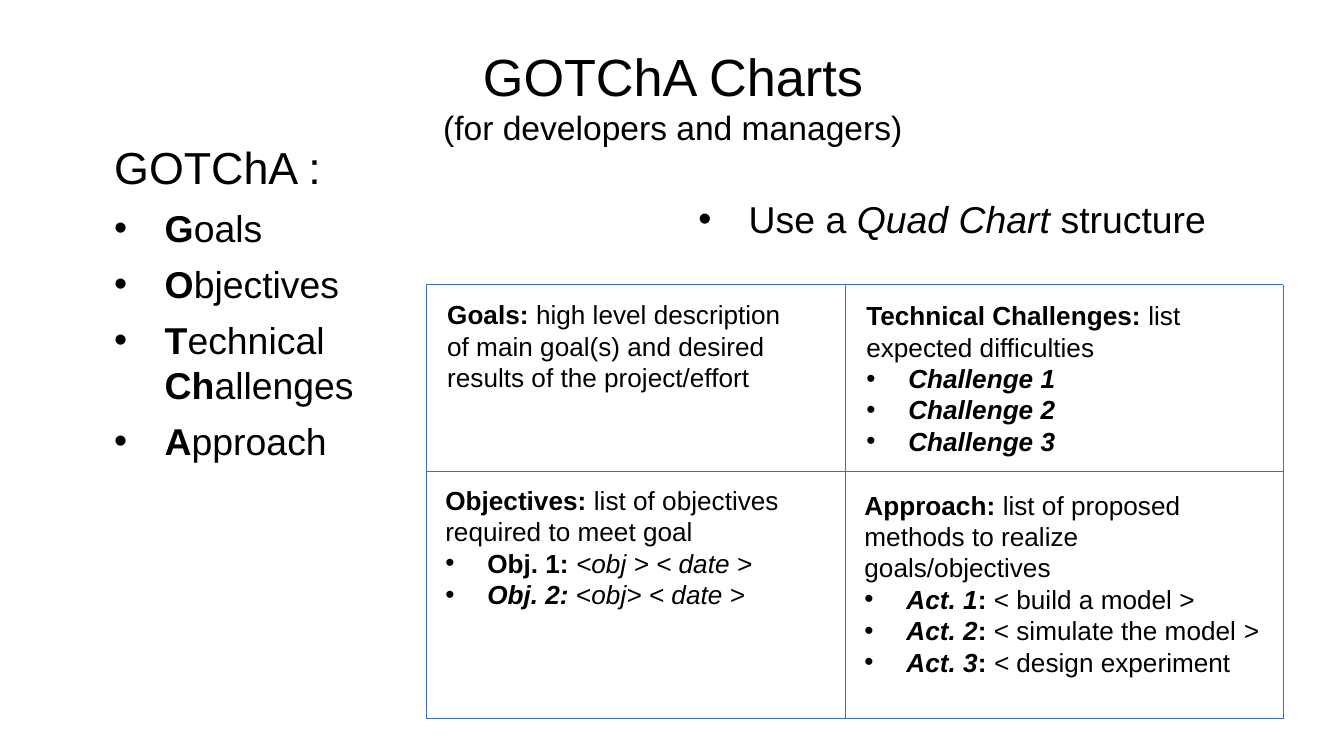
"""Build the GOTChA Charts slide with its quad chart."""
from lxml import etree
from pptx import Presentation
from pptx.dml.color import RGBColor
from pptx.enum import shapes, text
from pptx.oxml import ns
from pptx.util import Pt

BLACK = RGBColor(0x00, 0x00, 0x00)
BLUE = RGBColor(0x3F, 0x6F, 0xC3)


class Slide:
    def __init__(self, deck):
        self.font = "Arial"
        self.page = deck.slides.add_slide(deck.slide_layouts[1])

    def title(self, box, lines):
        self.fill(self.place(self.page.shapes.title, box), lines,
                  align=text.PP_ALIGN.CENTER)

    def body(self, box, lines, **style):
        self.fill(self.place(self.page.placeholders[1], box), lines, **style)

    def note(self, box, lines, **style):
        self.fill(self.page.shapes.add_textbox(*map(Pt, box)), lines, **style)

    def rule(self, x1, y1, x2, y2):
        edge = self.page.shapes.add_connector(
            shapes.MSO_CONNECTOR.STRAIGHT, *map(Pt, (x1, y1, x2, y2)))
        edge.line.color.rgb = BLUE
        edge.line.width = Pt(0.75)
        etree.SubElement(edge._element.spPr, ns.qn("a:effectLst"))

    def place(self, holder, box):
        holder.left, holder.top, holder.width, holder.height = map(Pt, box)
        return holder

    def fill(self, holder, lines, align=text.PP_ALIGN.LEFT, after=0, indent=22.5):
        frame = holder.text_frame
        frame.word_wrap = True
        frame.auto_size = text.MSO_AUTO_SIZE.SHAPE_TO_FIT_TEXT
        frame.vertical_anchor = text.MSO_ANCHOR.TOP
        for number, (size, bulleted, parts) in enumerate(lines):
            paragraph = frame.add_paragraph() if number else frame.paragraphs[0]
            paragraph.alignment = align
            paragraph.space_before, paragraph.space_after = Pt(0), Pt(after)
            self.bullet(paragraph, indent if bulleted else 0)
            for words, style in parts:
                run = paragraph.add_run()
                run.text = words
                run.font.name, run.font.size = self.font, Pt(size)
                run.font.bold, run.font.italic = "b" in style, "i" in style
                run.font.color.rgb = BLACK

    def bullet(self, paragraph, indent):
        props = paragraph._p.get_or_add_pPr()
        props.set("marL", str(Pt(indent)))
        props.set("indent", str(-Pt(indent)))
        if not indent:
            etree.SubElement(props, ns.qn("a:buNone"))
            return
        colour = etree.SubElement(props, ns.qn("a:buClr"))
        etree.SubElement(colour, ns.qn("a:srgbClr"), val=str(BLACK))
        etree.SubElement(props, ns.qn("a:buFont"), typeface=self.font)
        etree.SubElement(props, ns.qn("a:buChar"), char="•")


def quadrant(heading, summary, *items):
    return [(14, False, [(heading, "b"), (summary, "")])] + [
        (14, True, parts) for parts in items]


def main():
    deck = Presentation()
    deck.slide_width, deck.slide_height = Pt(720), Pt(405)
    slide = Slide(deck)

    slide.title((172, 20, 377, 63.5), [
        (28, False, [("GOTChA Charts", "")]),
        (18, False, [("(for developers and managers)", "")])])

    letters = [
        [("G", "b"), ("oals", "")],
        [("O", "b"), ("bjectives", "")],
        [("T", "b"), ("echnical ", ""), ("Ch", "b"), ("allenges", "")],
        [("A", "b"), ("pproach", "")]]
    slide.body((54, 71.5, 150, 181.5),
               [(24, False, [("GOTChA :", "")])]
               + [(20, True, parts) for parts in letters],
               after=6, indent=27)
    slide.note((367, 101.5, 297.5, 31.5), [
        (20, True, [("Use a ", ""), ("Quad Chart ", "i"), ("structure", "")])],
        after=6, indent=27)

    columns, rows = (228.5, 453, 687.5), (152.5, 252.5, 385)
    for x in columns:
        slide.rule(x, rows[0], x, rows[-1])
    for y in rows:
        slide.rule(columns[0], y, columns[-1], y)

    slide.note((232.5, 156.5, 200, 58.5), quadrant(
        "Goals: ",
        "high level description of main goal(s) and desired results of the project/effort"))
    slide.note((231.5, 256, 200, 75), quadrant(
        "Objectives: ", "list of objectives required to meet goal",
        [("Obj. 1: ", "b"), ("<obj > < date >", "i")],
        [("Obj. 2: ", "bi"), ("<", ""), ("obj> < date >", "i")]))
    slide.note((456, 258.5, 226, 108.5), quadrant(
        "Approach: ", "list of proposed methods to realize goals/objectives",
        [("Act. 1", "bi"), (": ", "b"), ("< build a model >", "")],
        [("Act. 2", "bi"), (": ", "b"), ("< simulate the model ", ""), (">", "i")],
        [("Act. 3", "bi"), (": ", "b"), ("< ", "i"), ("design experiment", "")]))
    slide.note((457, 157, 226, 92), quadrant(
        "Technical Challenges: ", "list expected difficulties",
        *([(f"Challenge {number}", "bi")] for number in (1, 2, 3))))

    deck.save("out.pptx")


if __name__ == "__main__":
    main()
